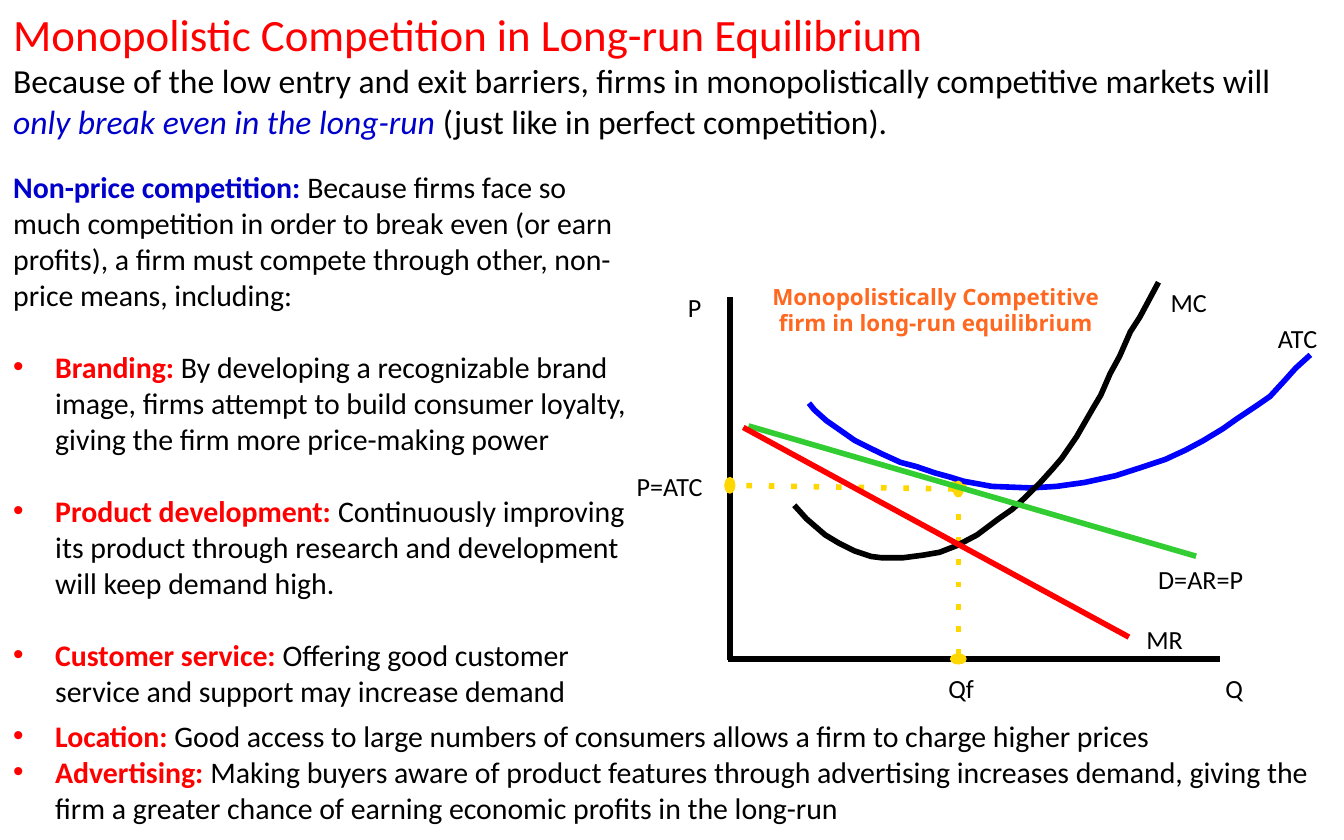
from dataclasses import dataclass
from typing import NamedTuple

from lxml import etree
from pptx import Presentation
from pptx import util as u
from pptx.dml.color import RGBColor
from pptx.enum import shapes, text
from pptx.oxml import ns


@dataclass(frozen=True)
class Theme:
    body_font: str = "Calibri"
    caption_font: str = "Noto Sans"
    red: str = "FF0000"
    black: str = "000000"
    navy: str = "0000CC"
    blue: str = "0000FF"
    green: str = "32CD32"
    gold: str = "FFD700"
    orange: str = "FF6820"
    title_size: float = 24
    lead_size: float = 18
    body_size: float = 16
    label_size: float = 14
    caption_size: float = 12
    stroke: float = 3
    bullet_indent: float = 22.5
    bullet_gap: float = 19.5  # one body line
    caption_leading: float = 14


THEME = Theme()


class Box(NamedTuple):
    left: float
    top: float
    width: float
    height: float


class Point(NamedTuple):
    x: float
    y: float


@dataclass(frozen=True)
class Run:
    words: str
    size: float
    color: str = THEME.black
    bold: bool = False
    italic: bool = False
    font: str = THEME.body_font


@dataclass(frozen=True)
class Paragraph:
    runs: tuple[Run, ...]
    bullet: bool = False
    before: float = 0
    leading: float | None = None
    centered: bool = False


@dataclass(frozen=True)
class Line:
    start: Point
    end: Point
    color: str
    dotted: bool = False


@dataclass(frozen=True)
class Curve:
    points: tuple[tuple[float, float], ...]
    color: str


@dataclass(frozen=True)
class Label:
    words: str
    left: float
    top: float
    width: float


def add_xml(parent, tag: str, **attributes: str):
    return etree.SubElement(parent, ns.qn(tag), attributes)


def draw_text(slide, box: Box, paragraphs: list[Paragraph]) -> None:
    frame = slide.shapes.add_textbox(*map(u.Pt, box)).text_frame
    frame.word_wrap = True
    frame.auto_size = text.MSO_AUTO_SIZE.SHAPE_TO_FIT_TEXT
    for index, item in enumerate(paragraphs):
        para = frame.add_paragraph() if index else frame.paragraphs[0]
        para.alignment = text.PP_ALIGN.CENTER if item.centered else text.PP_ALIGN.LEFT
        para.space_before = u.Pt(item.before)
        if item.leading:
            para.line_spacing = u.Pt(item.leading)
        if item.bullet:
            props = para._p.get_or_add_pPr()
            indent = u.Pt(THEME.bullet_indent)
            props.set("marL", str(indent))
            props.set("indent", str(-indent))
            add_xml(props, "a:buFont", typeface="Arial")
            add_xml(props, "a:buChar", char="•")
        for piece in item.runs:
            run = para.add_run()
            run.text = piece.words
            run.font.name = piece.font
            run.font.size = u.Pt(piece.size)
            run.font.bold = piece.bold
            run.font.italic = piece.italic
            run.font.color.rgb = RGBColor.from_string(piece.color)


def style_stroke(shape, color: str) -> None:
    shape.line.width = u.Pt(THEME.stroke)
    shape.line.color.rgb = RGBColor.from_string(color)


def draw_line(slide, line: Line) -> None:
    """Draw a straight line; a dotted one gets an oval at both ends."""
    connector = slide.shapes.add_connector(
        shapes.MSO_CONNECTOR.STRAIGHT, *map(u.Pt, line.start + line.end))
    style_stroke(connector, line.color)
    if line.dotted:
        stroke = connector.line._get_or_add_ln()
        add_xml(stroke, "a:prstDash", val="dot")
        for end in ("a:headEnd", "a:tailEnd"):
            add_xml(stroke, end, type="oval", w="med", len="sm")
    add_xml(connector._element.spPr, "a:effectLst")


def draw_curve(slide, curve: Curve) -> None:
    start, *rest = [(u.Pt(x), u.Pt(y)) for x, y in curve.points]
    builder = slide.shapes.build_freeform(*start)
    builder.add_line_segments(rest, close=False)
    outline = builder.convert_to_shape()
    outline.fill.background()
    outline.shadow.inherit = False
    style_stroke(outline, curve.color)


def point(term: str, explanation: str, before: float = 0) -> Paragraph:
    return Paragraph((Run(term, THEME.body_size, THEME.red, bold=True),
                      Run(explanation, THEME.body_size)), bullet=True, before=before)


HEADING = [
    Paragraph((Run("Monopolistic Competition in Long-run Equilibrium", THEME.title_size, THEME.red),)),
    Paragraph((
        Run("Because of the low entry and exit barriers, firms in monopolistically "
            "competitive markets will ", THEME.lead_size),
        Run("only break even in the long-run ", THEME.lead_size, THEME.navy, italic=True),
        Run("(just like in perfect competition).", THEME.lead_size))),
]
COMPETITION = [
    Paragraph((
        Run("Non-price competition: ", THEME.body_size, THEME.navy, bold=True),
        Run("Because firms face so much competition in order to break even (or earn profits), "
            "a firm must compete through other, non-price means, including:", THEME.body_size))),
    point("Branding: ", "By developing a recognizable brand image, firms attempt to build consumer "
          "loyalty, giving the firm more price-making power", THEME.bullet_gap),
    point("Product development: ", "Continuously improving its product through research and "
          "development will keep demand high.", THEME.bullet_gap),
    point("Customer service: ", "Offering good customer service and support may increase demand",
          THEME.bullet_gap),
]
REACH = [
    point("Location: ", "Good access to large numbers of consumers allows a firm to charge higher prices"),
    point("Advertising: ", "Making buyers aware of product features through advertising increases demand, "
          "giving the firm a greater chance of earning economic profits in the long-run"),
]
CAPTION = [Paragraph((Run("Monopolistically Competitive firm in long-run equilibrium", THEME.caption_size,
                          THEME.orange, bold=True, font=THEME.caption_font),),
                     leading=THEME.caption_leading, centered=True)]

AXIS_X, AXIS_Y, QUANTITY_X = 391, 353, 513.4
LABELS = [
    Label("P", 361.4, 152.6, 30), Label("Q", 649.4, 356.4, 33),
    Label("P=ATC", 334, 248.4, 62), Label("Qf", 501, 356.4, 33),
    Label("D=AR=P", 613.4, 298, 78), Label("MR", 607, 330.5, 43),
    Label("MC", 620, 149.8, 43), Label("ATC", 677.5, 169.2, 49),
]
ATC = Curve((
    (433.4, 216), (436.3, 219.6), (442.8, 225.4), (450, 230.4), (458, 236), (466, 240), (473, 243.4),
    (482.4, 247.7), (491, 250), (501, 253.4), (509, 255.6), (516.2, 257.8), (531.4, 260.6),
    (552.2, 261.4), (566, 260.6), (581, 258.5), (597.6, 254.9), (613.4, 249.8), (624.2, 246.2),
    (635, 241.2), (644.4, 236.2), (655.2, 229.7), (662.4, 224.6), (673.2, 217.4), (680.4, 212.4),
    (689, 203), (694.1, 197.3), (702, 190.1)), THEME.blue)
MC = Curve((
    (425.5, 270.7), (432, 277.9), (437, 282.2), (442.1, 286.6), (449.3, 290.9), (457.9, 295.2),
    (466.6, 298.1), (472.3, 298.8), (483.8, 298.8), (494.6, 297.4), (503.3, 295.9), (512.6, 292.3),
    (523.4, 286.6), (535, 277.9), (542.2, 272.9), (548.6, 267.1), (557.3, 258.5), (563.8, 251.3),
    (568.8, 245.5), (576.7, 234), (585.4, 218.9), (589.7, 211.7), (594.7, 200.2), (599.8, 190.8),
    (605.5, 177.8), (610.6, 169.9), (615.6, 160.6), (620.6, 151.2)), THEME.black)
GRAPH = [
    Line(Point(AXIS_X, 159), Point(AXIS_X, 353.5), THEME.black),
    Line(Point(390, AXIS_Y), Point(653.8, AXIS_Y), THEME.black),
    Line(Point(QUANTITY_X, AXIS_Y), Point(QUANTITY_X, 260), THEME.gold, dotted=True),
    ATC,
    MC,
    Line(Point(QUANTITY_X, 262), Point(AXIS_X, 260), THEME.gold, dotted=True),
    Line(Point(401, 228.2), Point(640.8, 298), THEME.green),
    Line(Point(398.2, 229), Point(604.8, 341.3), THEME.red),
]


def main() -> None:
    deck = Presentation()
    deck.slide_width, deck.slide_height = u.Pt(720), u.Pt(450)
    slide = deck.slides.add_slide(deck.slide_layouts[6])
    draw_text(slide, Box(0, 0, 720, 80), HEADING)
    for item in GRAPH:
        (draw_curve if isinstance(item, Curve) else draw_line)(slide, item)
    for label in LABELS:
        draw_text(slide, Box(label.left, label.top, label.width, 24.3),
                  [Paragraph((Run(label.words, THEME.label_size),))])
    draw_text(slide, Box(0, 87, 350, 298), COMPETITION)
    draw_text(slide, Box(402, 148.5, 198.5, 36), CAPTION)
    draw_text(slide, Box(0, 381, 720, 65.5), REACH)
    deck.save("out.pptx")


if __name__ == "__main__":
    main()
